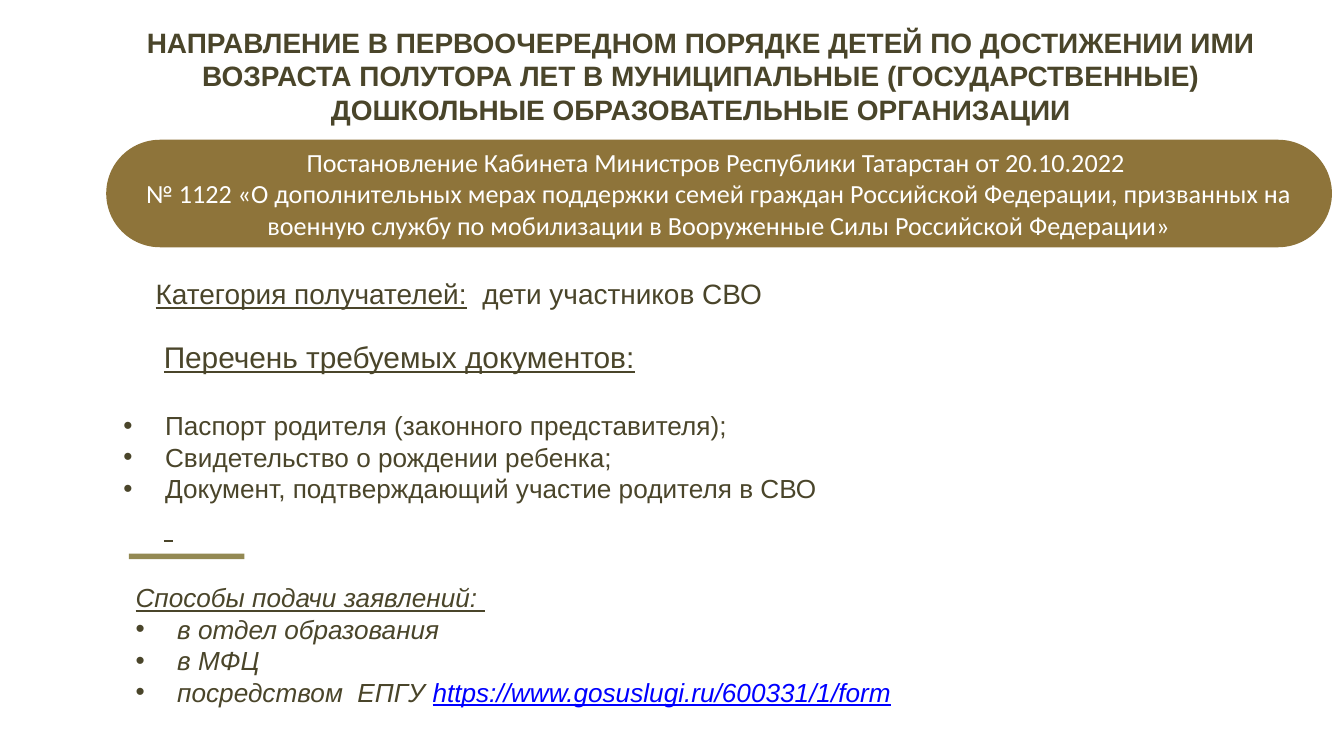
"""Build a slide on priority kindergarten admission for children of service members."""
import pptx
import pptx.dml.color
import pptx.enum.shapes
import pptx.enum.text
import pptx.oxml
import pptx.oxml.ns
import pptx.util
from pptx.util import Inches

DARK = pptx.dml.color.RGBColor(0x4A, 0x45, 0x2A)
GOLD = pptx.dml.color.RGBColor(0x8E, 0x74, 0x3A)
OLIVE = pptx.dml.color.RGBColor(0x93, 0x89, 0x53)
WHITE = pptx.dml.color.RGBColor(0xFF, 0xFF, 0xFF)
BLUE = pptx.dml.color.RGBColor(0x00, 0x00, 0xFF)
ALIGN = pptx.enum.text.PP_ALIGN
SHAPES = pptx.enum.shapes.MSO_SHAPE


def add_text(frame, text, new=True, align=ALIGN.JUSTIFY, size=14, color=DARK, font="Arial",
             bold=False, italic=False, underline=False, bullet=False, indent=0, after=0):
    """Add a run, in a new paragraph or at the end of the last one."""
    paragraph = frame.paragraphs[-1]
    if new:
        if paragraph.runs:
            paragraph = frame.add_paragraph()
        paragraph.alignment = align
        paragraph.space_after = pptx.util.Pt(after)
        properties = paragraph._p.get_or_add_pPr()
        if bullet:
            properties.set("marL", str(Inches(0.31)))
            indent = -0.31
            for mark in ['buFont {} typeface="Arial"', 'buChar {} char="•"']:
                properties.append(pptx.oxml.parse_xml(
                    "<a:" + mark.format(pptx.oxml.ns.nsdecls("a")) + "/>"))
        properties.set("indent", str(Inches(indent)))
    run = paragraph.add_run()
    run.text = text
    run.font.name = font
    run.font.size = pptx.util.Pt(size)
    run.font.bold = bold
    run.font.italic = italic
    run.font.underline = underline
    run.font.color.rgb = color


presentation = pptx.Presentation()
presentation.slide_width = Inches(10)
presentation.slide_height = Inches(10) * 9 // 16
slide = presentation.slides.add_slide(presentation.slide_layouts[6])

frames = []
for left, top, width, height in [(0.79, 0.14, 8.85, 0.86), (1.06, 2.01, 8.58, 0.35),
                                 (0.82, 2.47, 8.82, 1.65), (0.91, 4.28, 8.41, 1.04)]:
    frame = slide.shapes.add_textbox(
        Inches(left), Inches(top), Inches(width), Inches(height)).text_frame
    frame.word_wrap = True
    frames.append(frame)
title, recipients, documents, channels = frames

divider = slide.shapes.add_shape(
    SHAPES.RECTANGLE, Inches(0.96), Inches(4.12), Inches(0.86), Inches(0.04))
decree = slide.shapes.add_shape(
    SHAPES.ROUNDED_RECTANGLE, Inches(0.79), Inches(1.04), Inches(9.12), Inches(0.8))
decree.adjustments[0] = 0.5
for shape, color in [(divider, OLIVE), (decree, GOLD)]:
    shape.shadow.inherit = False
    shape.fill.solid()
    shape.fill.fore_color.rgb = color
    shape.line.fill.background()

add_text(title, "НАПРАВЛЕНИЕ В ПЕРВООЧЕРЕДНОМ ПОРЯДКЕ ДЕТЕЙ ПО ДОСТИЖЕНИИ ИМИ "
         "ВОЗРАСТА ПОЛУТОРА ЛЕТ В МУНИЦИПАЛЬНЫЕ (ГОСУДАРСТВЕННЫЕ) "
         "ДОШКОЛЬНЫЕ ОБРАЗОВАТЕЛЬНЫЕ ОРГАНИЗАЦИИ",
         align=ALIGN.CENTER, size=15, bold=True)

decree.text_frame.word_wrap = True
decree.text_frame.vertical_anchor = pptx.enum.text.MSO_ANCHOR.MIDDLE
for line in ["Постановление Кабинета Министров Республики Татарстан от 20.10.2022 ",
             "№ 1122 «О дополнительных мерах поддержки семей граждан Российской Федерации, "
             "призванных на военную службу по мобилизации в Вооруженные Силы "
             "Российской Федерации»"]:
    add_text(decree.text_frame, line, align=ALIGN.CENTER, color=WHITE, font="Calibri")

add_text(recipients, "Категория получателей:", align=ALIGN.LEFT, size=15, underline=True)
add_text(recipients, "  дети участников СВО", new=False, size=15)

add_text(documents, "Перечень требуемых документов:", size=16, underline=True,
         indent=0.3, after=19)
for document in ["Паспорт родителя (законного представителя);",
                 "Свидетельство о рождении ребенка;",
                 "Документ, подтверждающий участие родителя в СВО"]:
    add_text(documents, document, bullet=True)
add_text(documents, " ", size=18, underline=True, indent=0.3)

add_text(channels, "Способы подачи заявлений: ", italic=True, underline=True)
for channel in ["в отдел образования", "в МФЦ", "посредством  ЕПГУ "]:
    add_text(channels, channel, italic=True, bullet=True)
add_text(channels, "https://www.gosuslugi.ru/600331/1/form", new=False,
         color=BLUE, italic=True, underline=True)

presentation.save("out.pptx")
